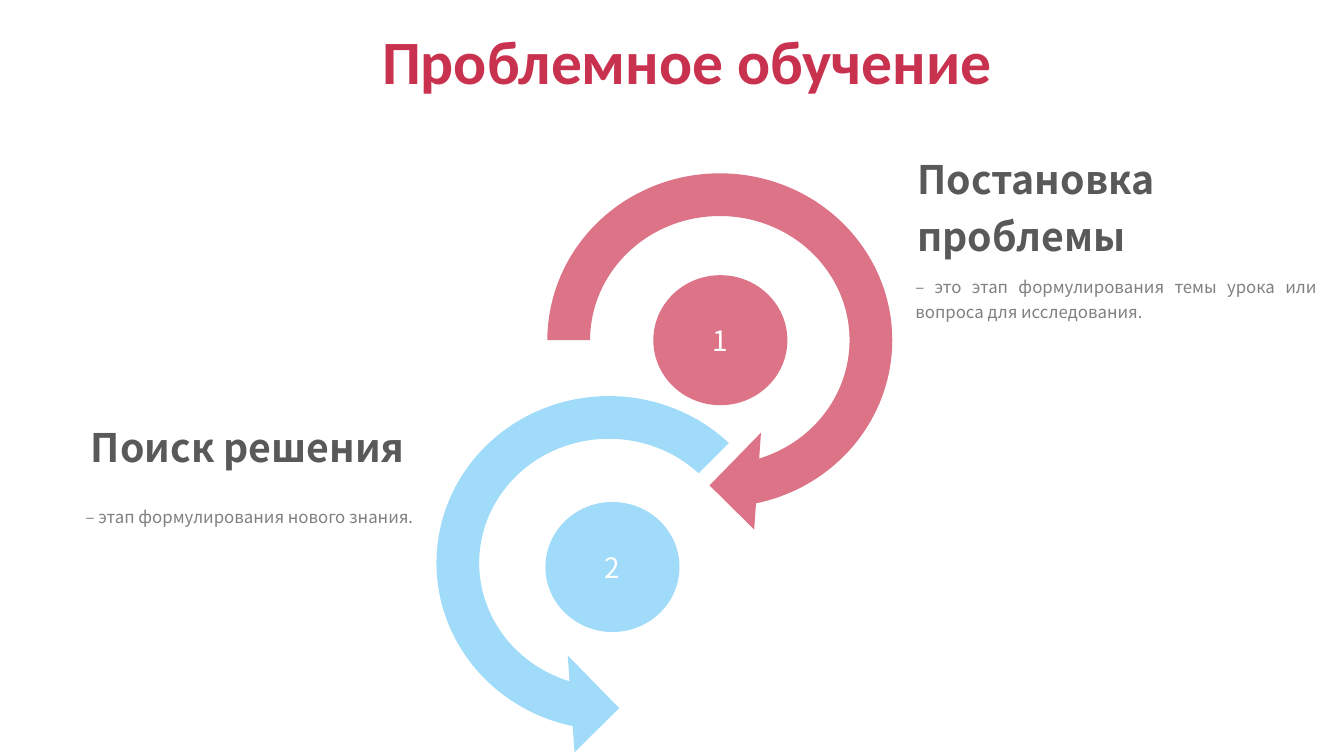
from pptx import Presentation
from pptx.dml.color import RGBColor
from pptx.enum.shapes import MSO_SHAPE
from pptx.enum.text import MSO_ANCHOR, PP_ALIGN

PX = 9144  # 100 px to the inch
SANS = "Noto Sans CJK SC"
HEX = {
    "title": "C9324F",
    "rose": "DC7387",
    "sky": "A0DCF9",
    "head": "595959",
    "body": "808080",
    "white": "FFFFFF",
}


def color(name):
    return RGBColor.from_string(HEX[name])


def scale(*sizes):
    return [size * PX for size in sizes]


def write(frame, text, size, tint, align, font=SANS, bold=False, gap=1.0):
    """Fill the first paragraph of a frame with one styled run."""
    frame.word_wrap = True
    para = frame.paragraphs[0]
    para.alignment = align
    para.line_spacing = gap
    run = para.add_run()
    run.text = text
    run.font.name = font
    run.font.size = size * 12700
    run.font.bold = bold
    run.font.color.rgb = color(tint)


def add_title(slide, text):
    title = slide.shapes.title
    title.left, title.top, title.width, title.height = scale(369, 15, 873, 99)
    title.text_frame.vertical_anchor = MSO_ANCHOR.MIDDLE
    write(title.text_frame, text, 44, "title", PP_ALIGN.LEFT,
          font="Calibri", bold=True, gap=0.9)


def add_solid(slide, kind, box, tint):
    shape = slide.shapes.add_shape(kind, *scale(*box))
    shape.shadow.inherit = False
    shape.fill.solid()
    shape.fill.fore_color.rgb = color(tint)
    shape.line.fill.background()
    return shape


def add_arrow(slide, kind, left, top, tint, end, start):
    """Draw a round arrow; end and start are angles in degrees."""
    arrow = add_solid(slide, kind, (left, top, 396, 385), tint)
    values = (0.11, 11.423, end * 0.6, start * 0.6, 0.125)
    for index, value in enumerate(values):
        arrow.adjustments[index] = value


def add_disc(slide, left, top, tint, label):
    disc = add_solid(slide, MSO_SHAPE.OVAL, (left, top, 133, 129), tint)
    disc.text_frame.vertical_anchor = MSO_ANCHOR.MIDDLE
    write(disc.text_frame, label, 20, "white", PP_ALIGN.CENTER)


def add_text(slide, box, text, size, tint, align, bold=False):
    frame = slide.shapes.add_textbox(*scale(*box)).text_frame
    write(frame, text, size, tint, align, bold=bold, gap=1.2)


def add_stage(slide, head, head_box, body, body_box, align):
    add_text(slide, body_box, body, 12, "body", align)
    add_text(slide, head_box, head, 28, "head", align, bold=True)


def main():
    deck = Presentation()
    deck.slide_width, deck.slide_height = scale(1333, 750)
    slide = deck.slides.add_slide(deck.slide_layouts[5])

    add_title(slide, "Проблемное обучение")
    add_arrow(slide, MSO_SHAPE.LEFT_CIRCULAR_ARROW, 406, 366, "sky", 105, 315)
    add_disc(slide, 541, 498, "sky", "2")
    add_arrow(slide, MSO_SHAPE.CIRCULAR_ARROW, 516, 145, "rose", 75, 180)
    add_disc(slide, 648, 273, "rose", "1")

    add_stage(slide, "Постановка проблемы", (900, 140, 453, 122),
              "– это этап формулирования темы урока или вопроса для исследования.",
              (898, 266, 418, 58), PP_ALIGN.JUSTIFY)
    add_stage(slide, "Поиск решения", (50, 406, 361, 122),
              "– этап формулирования нового знания.",
              (15, 494, 405, 34), PP_ALIGN.RIGHT)

    deck.save("out.pptx")


if __name__ == "__main__":
    main()
